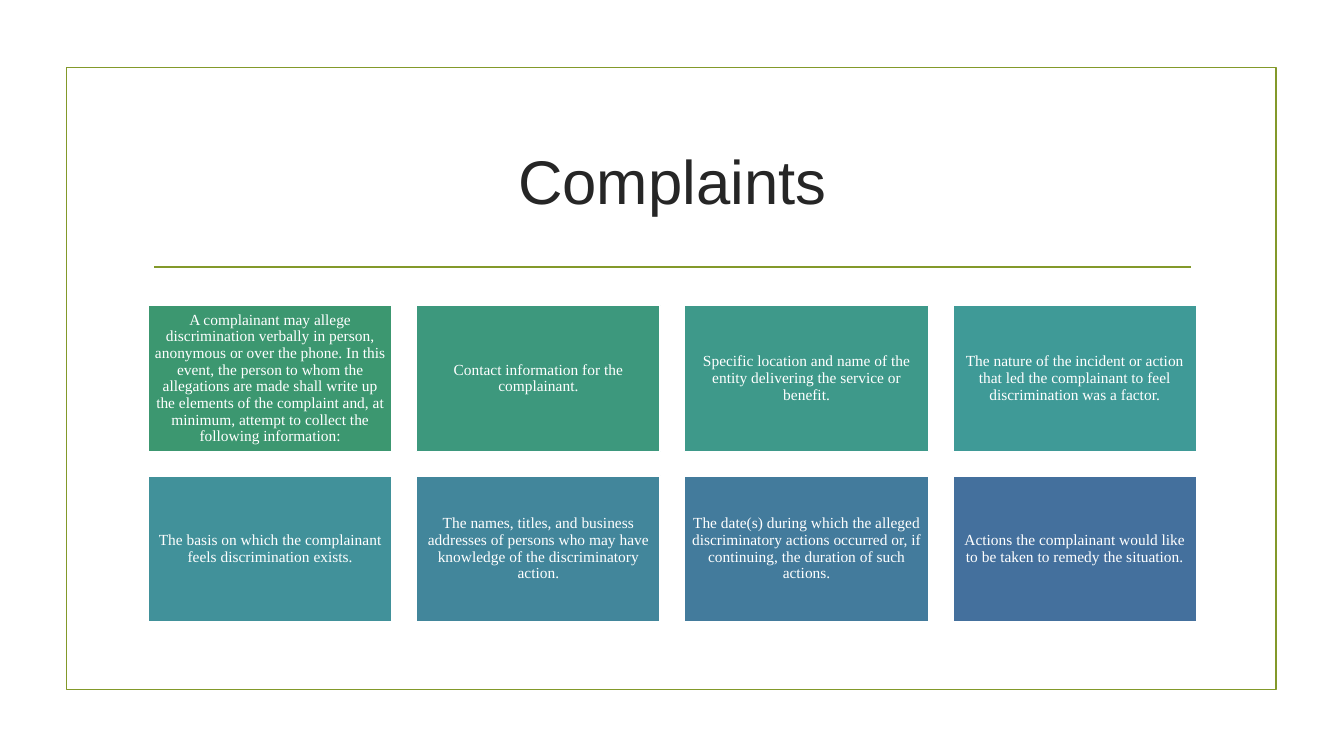
import pptx
import pptx.dml.color
import pptx.enum.shapes
import pptx.enum.text
import pptx.oxml.ns
import pptx.util
from lxml import etree

Inches = pptx.util.Inches
Pt = pptx.util.Pt

OLIVE = "83992A"
WHITE = "FFFFFF"
COLUMNS = 4
CARDS = [
    ("A complainant may allege discrimination verbally in person, anonymous or over the phone. "
     "In this event, the person to whom the allegations are made shall write up the elements of "
     "the complaint and, at minimum, attempt to collect the following information:", "3C9770"),
    ("Contact information for the complainant.", "3D987D"),
    ("Specific location and name of the entity delivering the service or benefit.", "3E998A"),
    ("The nature of the incident or action that led the complainant to feel discrimination "
     "was a factor.", "3F9A97"),
    ("The basis on which the complainant feels discrimination exists.", "41919A"),
    ("The names, titles, and business addresses of persons who may have knowledge of the "
     "discriminatory action.", "42869B"),
    ("The date(s) during which the alleged discriminatory actions occurred or, if continuing, "
     "the duration of such actions.", "437B9C"),
    ("Actions the complainant would like to be taken to remedy the situation.", "44709D"),
]


def color(value):
    return pptx.dml.color.RGBColor.from_string(value)


def set_line(line, value):
    line.color.rgb = color(value)
    line.width = Pt(1.25)


def add_rectangle(slide, left, top, width, height, line, fill=None):
    shape = slide.shapes.add_shape(
        pptx.enum.shapes.MSO_SHAPE.RECTANGLE,
        Inches(left), Inches(top), Inches(width), Inches(height))
    shape.shadow.inherit = False
    if fill:
        shape.fill.solid()
        shape.fill.fore_color.rgb = color(fill)
    else:
        shape.fill.background()
    set_line(shape.line, line)
    return shape


def add_rule(slide, left, right, top):
    connector = slide.shapes.add_connector(
        pptx.enum.shapes.MSO_CONNECTOR.STRAIGHT,
        Inches(left), Inches(top), Inches(right), Inches(top))
    set_line(connector.line, OLIVE)
    properties = connector._element.spPr
    etree.SubElement(properties, pptx.oxml.ns.qn("a:effectLst"))


def write_centered(shape, text, font_name, size, value):
    frame = shape.text_frame
    frame.word_wrap = True
    frame.vertical_anchor = pptx.enum.text.MSO_ANCHOR.MIDDLE
    paragraph = frame.paragraphs[0]
    paragraph.text = text
    paragraph.alignment = pptx.enum.text.PP_ALIGN.CENTER
    paragraph.font.name = font_name
    paragraph.font.size = Pt(size)
    paragraph.font.color.rgb = color(value)
    return paragraph


def add_title(slide, text):
    box = slide.shapes.add_textbox(Inches(1.42), Inches(1.07), Inches(10.5), Inches(1.43))
    write_centered(box, text, "Arial", 44, "262626")


def add_card(slide, index, text, fill):
    row, column = divmod(index, COLUMNS)
    card = add_rectangle(
        slide, 1.47 + 2.66 * column, 3.03 + 1.69 * row, 2.42, 1.45, WHITE, fill)
    frame = card.text_frame
    frame.margin_left = frame.margin_right = Inches(0.05)
    frame.margin_top = frame.margin_bottom = Inches(0.05)
    paragraph = write_centered(card, text, "Times New Roman", 11, WHITE)
    paragraph.line_spacing = 0.9


def main():
    presentation = pptx.Presentation()
    presentation.slide_width = Inches(13.33)
    presentation.slide_height = Inches(7.5)
    slide = presentation.slides.add_slide(presentation.slide_layouts[6])
    add_rectangle(slide, 0.66, 0.67, 12, 6.17, OLIVE)
    add_rule(slide, 1.53, 11.81, 2.65)
    add_title(slide, "Complaints")
    for index, (text, fill) in enumerate(CARDS):
        add_card(slide, index, text, fill)
    presentation.save("out.pptx")


if __name__ == "__main__":
    main()
